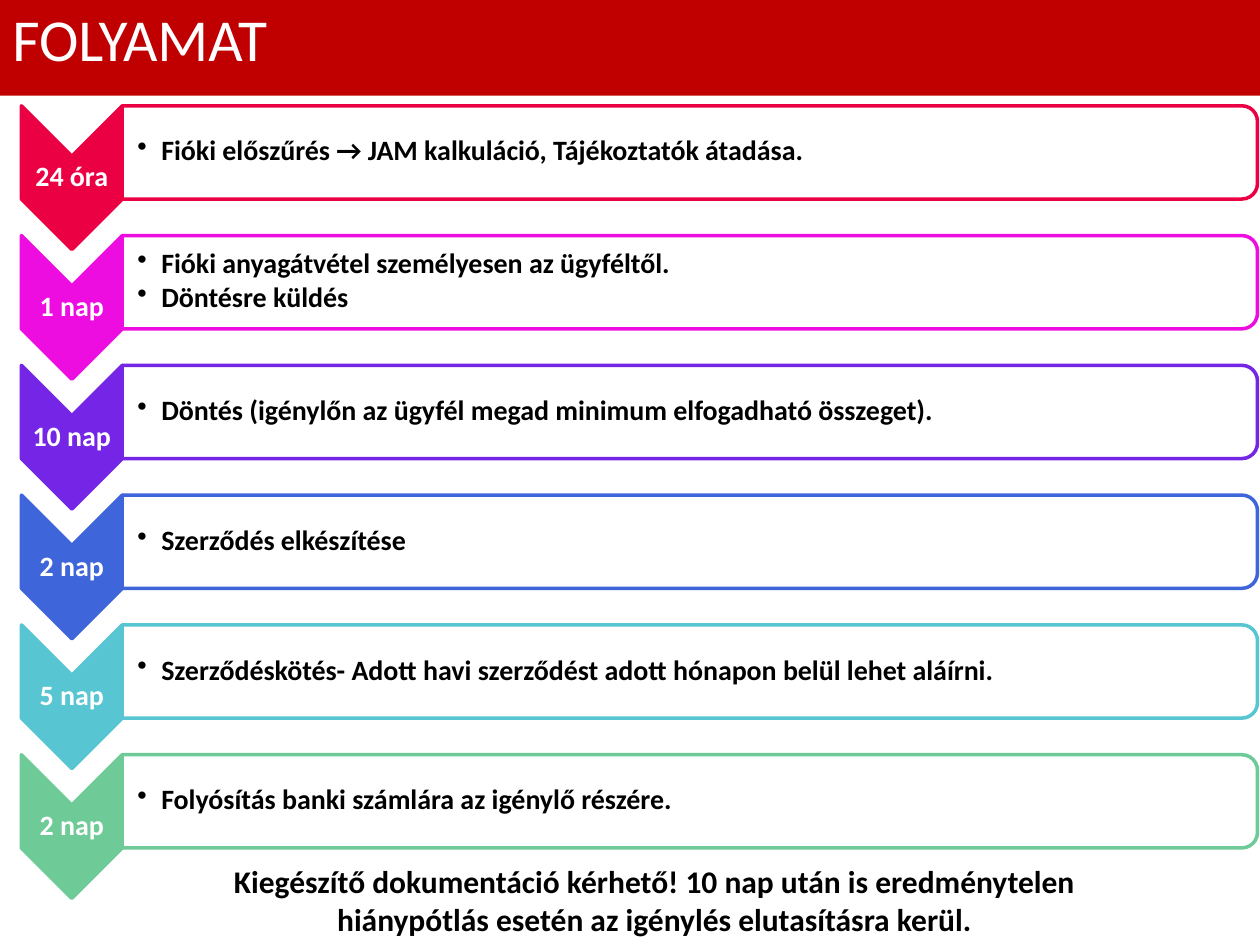
from lxml import etree
from pptx import Presentation, util as u
from pptx.dml import color
from pptx.enum import shapes, text
from pptx.oxml import ns

COLORS = {
    "banner": "C00000", "white": "FFFFFF", "black": "000000",
    "red": "EC0044", "magenta": "EE0DE1", "violet": "7425E5",
    "blue": "3F65DB", "teal": "57C5D2", "green": "6ECB98",
}
FONTS = {
    "title": {"size": u.Pt(34), "bold": False},
    "step": {"size": u.Pt(16), "bold": True},
    "note": {"size": u.Pt(18), "bold": True},
}
CENTER = {"alignment": text.PP_ALIGN.CENTER}
TIGHT = {"line_spacing": 0.9}
BULLETED = {**TIGHT, "space_after": u.Pt(2.4)}

# Duration, colour and tasks of each step
STEPS = [
    ("24 óra", "red", ["Fióki előszűrés → JAM kalkuláció, Tájékoztatók átadása."]),
    ("1 nap", "magenta", ["Fióki anyagátvétel személyesen az ügyféltől.",
                          "Döntésre küldés"]),
    ("10 nap", "violet", ["Döntés (igénylőn az ügyfél megad minimum elfogadható összeget)."]),
    ("2 nap", "blue", ["Szerződés elkészítése"]),
    ("5 nap", "teal", ["Szerződéskötés- Adott havi szerződést adott hónapon belül "
                       "lehet aláírni."]),
    ("2 nap", "green", ["Folyósítás banki számlára az igénylő részére."]),
]
FIRST_TOP, PITCH = 0.84, 1.03
PANEL_LEFT, PANEL_WIDTH, PANEL_HEIGHT = 0.97, 9.01, 0.74
CHEVRON_LEFT, CHEVRON_WIDTH, CHEVRON_HEIGHT = 0.17, 0.8, 1.14


def set_all(obj, values):
    for name, value in values.items():
        setattr(obj, name, value)


def rgb(name):
    return color.RGBColor.from_string(COLORS[name])


def add_bullet(p):
    pPr = p._p.get_or_add_pPr()
    pPr.set("marL", str(u.Inches(0.19)))
    pPr.set("indent", str(u.Inches(-0.19)))
    etree.SubElement(pPr, ns.qn("a:buChar")).set("char", "•")


def write(sp, lines, font, ink, para, frame=None, bullets=False):
    tf = sp.text_frame
    set_all(tf, {"word_wrap": True, **(frame or {})})
    for i, line in enumerate(lines):
        p = tf.add_paragraph() if i else tf.paragraphs[0]
        if bullets:
            add_bullet(p)
        set_all(p, para)
        r = p.add_run()
        r.text = line
        set_all(r.font, {"name": "Calibri", **FONTS[font]})
        r.font.color.rgb = rgb(ink)


def add_text(s, box, *args, **kwargs):
    sp = s.shapes.add_textbox(*map(u.Inches, box))
    write(sp, *args, **kwargs)


def add_block(s, kind, box, fill, line=None):
    sp = s.shapes.add_shape(kind, *map(u.Inches, box))
    sp.shadow.inherit = False
    sp.fill.solid()
    sp.fill.fore_color.rgb = rgb(fill)
    if line:
        sp.line.color.rgb = rgb(line)
        sp.line.width = u.Pt(2)
    else:
        sp.line.fill.background()
    return sp


def add_turned(s, kind, left, top, width, height, fill, line):
    """Add a shape turned clockwise that covers the given box on the slide."""
    shift = (width - height) / 2
    sp = add_block(s, kind, (left + shift, top - shift, height, width), fill, line)
    sp.rotation = 90
    return sp


def small_margins(left):
    edge = u.Inches(0.01)
    return {"margin_left": u.Inches(left), "margin_right": edge,
            "margin_top": edge, "margin_bottom": edge,
            "vertical_anchor": text.MSO_ANCHOR.MIDDLE}


def add_step(s, top, duration, tone, tasks):
    # Chevron with the duration
    add_turned(s, shapes.MSO_SHAPE.CHEVRON, CHEVRON_LEFT, top,
               CHEVRON_WIDTH, CHEVRON_HEIGHT, tone, tone)
    add_text(s, (CHEVRON_LEFT, top + 0.4, CHEVRON_WIDTH, 0.34), [duration],
             "step", "white", {**CENTER, **TIGHT}, small_margins(0.01))

    # Panel with the tasks
    panel = add_turned(s, shapes.MSO_SHAPE.ROUND_2_SAME_RECTANGLE, PANEL_LEFT, top,
                       PANEL_WIDTH, PANEL_HEIGHT, "white", tone)
    fill = panel._element.spPr.find(ns.qn("a:solidFill"))
    etree.SubElement(fill[0], ns.qn("a:alpha")).set("val", "90000")
    add_text(s, (PANEL_LEFT, top + 0.03, 8.97, 0.67), tasks,
             "step", "black", BULLETED, small_margins(0.12), bullets=True)


def add_banner(s, title):
    sp = add_block(s, shapes.MSO_SHAPE.RECTANGLE, (0, -0.03, 10.04, 0.79), "banner")
    write(sp, [title], "title", "white", {"alignment": text.PP_ALIGN.LEFT},
          {"vertical_anchor": text.MSO_ANCHOR.TOP})


def main():
    prs = Presentation()
    prs.slide_width, prs.slide_height = u.Inches(10), u.Inches(7.5)
    s = prs.slides.add_slide(prs.slide_layouts[6])

    # Process steps
    for i, step in enumerate(STEPS):
        add_step(s, FIRST_TOP + i * PITCH, *step)

    # Closing note
    add_text(s, (1.14, 6.79, 8.11, 0.71),
             ["Kiegészítő dokumentáció kérhető! 10 nap után is eredménytelen "
              "hiánypótlás esetén az igénylés elutasításra kerül."],
             "note", "black", CENTER)

    # Title banner
    add_banner(s, "FOLYAMAT")
    prs.save("out.pptx")


if __name__ == "__main__":
    main()
